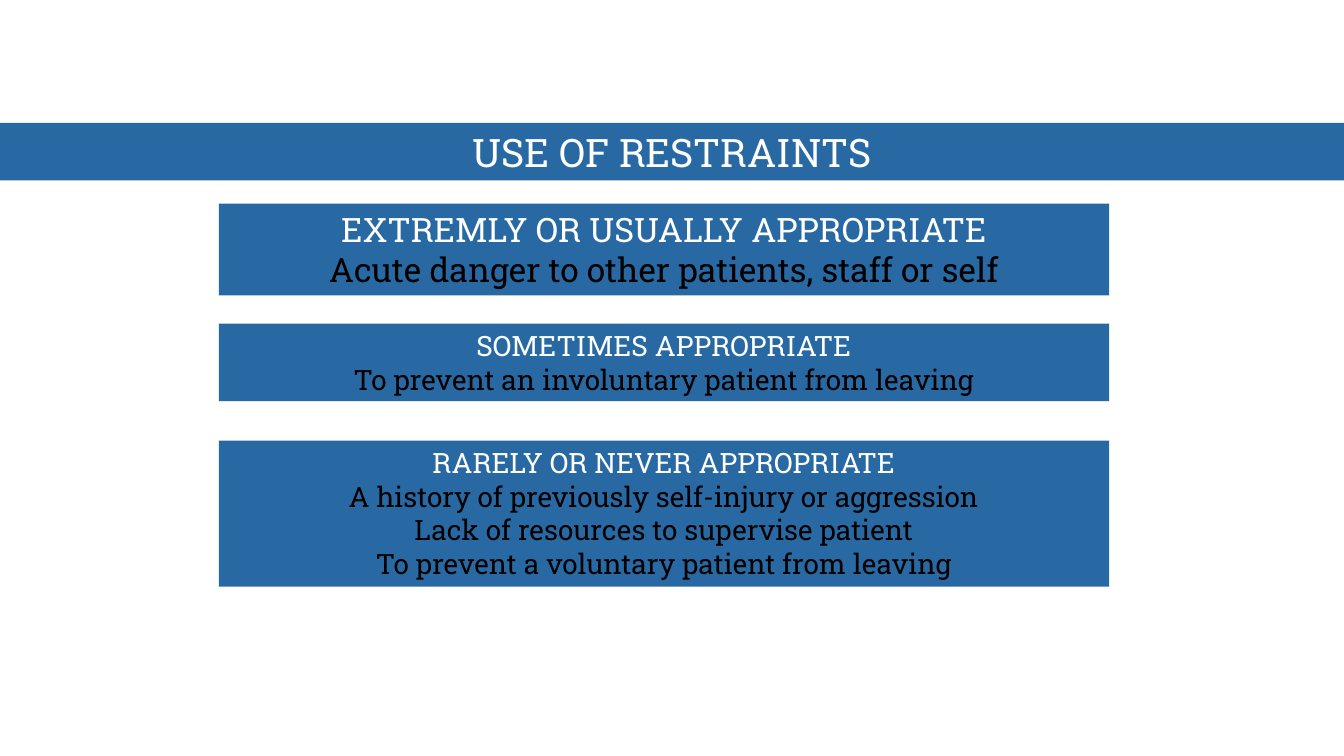
from dataclasses import dataclass

from pptx import Presentation
from pptx.dml.color import RGBColor
from pptx.enum.shapes import MSO_SHAPE
from pptx.enum.text import MSO_ANCHOR, PP_ALIGN
from pptx.shapes.autoshape import Shape
from pptx.util import Inches, Pt

SLIDE_WIDTH = Inches(13.33)
SLIDE_HEIGHT = Inches(7.5)
PANEL_LEFT = 2.17 / 13.33
PANEL_WIDTH = 8.83 / 13.33
FONT = "Roboto Slab"
BLUE = "2969A3"
WHITE = "FFFFFF"
BLACK = "000000"


@dataclass(frozen=True)
class Panel:
    top: float
    height: float
    size: int
    heading: str
    reasons: tuple[str, ...] = ()


TITLE = Panel(1.22 / 7.5, 0.57 / 7.5, 28, "USE OF RESTRAINTS")
PANELS = (
    Panel(2.02 / 7.5, 0.91 / 7.5, 24, "EXTREMLY OR USUALLY APPROPRIATE",
          ("Acute danger to other patients, staff or self",)),
    Panel(3.21 / 7.5, 0.77 / 7.5, 20, "SOMETIMES APPROPRIATE",
          ("To prevent an involuntary patient from leaving",)),
    Panel(4.37 / 7.5, 1.45 / 7.5, 20, "RARELY OR NEVER APPROPRIATE",
          ("A history of previously self-injury or aggression",
           "Lack of resources to supervise patient",
           "To prevent a voluntary patient from leaving")),
)


def color(value: str) -> RGBColor:
    return RGBColor.from_string(value)


def place(shape: Shape, panel: Panel, left: float, width: float) -> None:
    shape.left = round(left * SLIDE_WIDTH)
    shape.top = round(panel.top * SLIDE_HEIGHT)
    shape.width = round(width * SLIDE_WIDTH)
    shape.height = round(panel.height * SLIDE_HEIGHT)


def fill_panel(shape: Shape, panel: Panel) -> None:
    shape.fill.solid()
    shape.fill.fore_color.rgb = color(BLUE)
    shape.line.fill.background()
    frame = shape.text_frame
    frame.word_wrap = True
    frame.vertical_anchor = MSO_ANCHOR.TOP
    for index, text in enumerate((panel.heading, *panel.reasons)):
        paragraph = frame.add_paragraph() if index else frame.paragraphs[0]
        paragraph.alignment = PP_ALIGN.CENTER
        run = paragraph.add_run()
        run.text = text
        run.font.name = FONT
        run.font.size = Pt(panel.size)
        run.font.color.rgb = color(BLACK if index else WHITE)


def main() -> None:
    presentation = Presentation()
    presentation.slide_width = SLIDE_WIDTH
    presentation.slide_height = SLIDE_HEIGHT
    slide = presentation.slides.add_slide(presentation.slide_layouts[5])

    title = slide.shapes.title
    place(title, TITLE, 0, 1)
    fill_panel(title, TITLE)

    for panel in PANELS:
        shape = slide.shapes.add_shape(MSO_SHAPE.RECTANGLE, 0, 0, 0, 0)
        shape.shadow.inherit = False
        place(shape, panel, PANEL_LEFT, PANEL_WIDTH)
        fill_panel(shape, panel)

    presentation.save("out.pptx")


if __name__ == "__main__":
    main()
